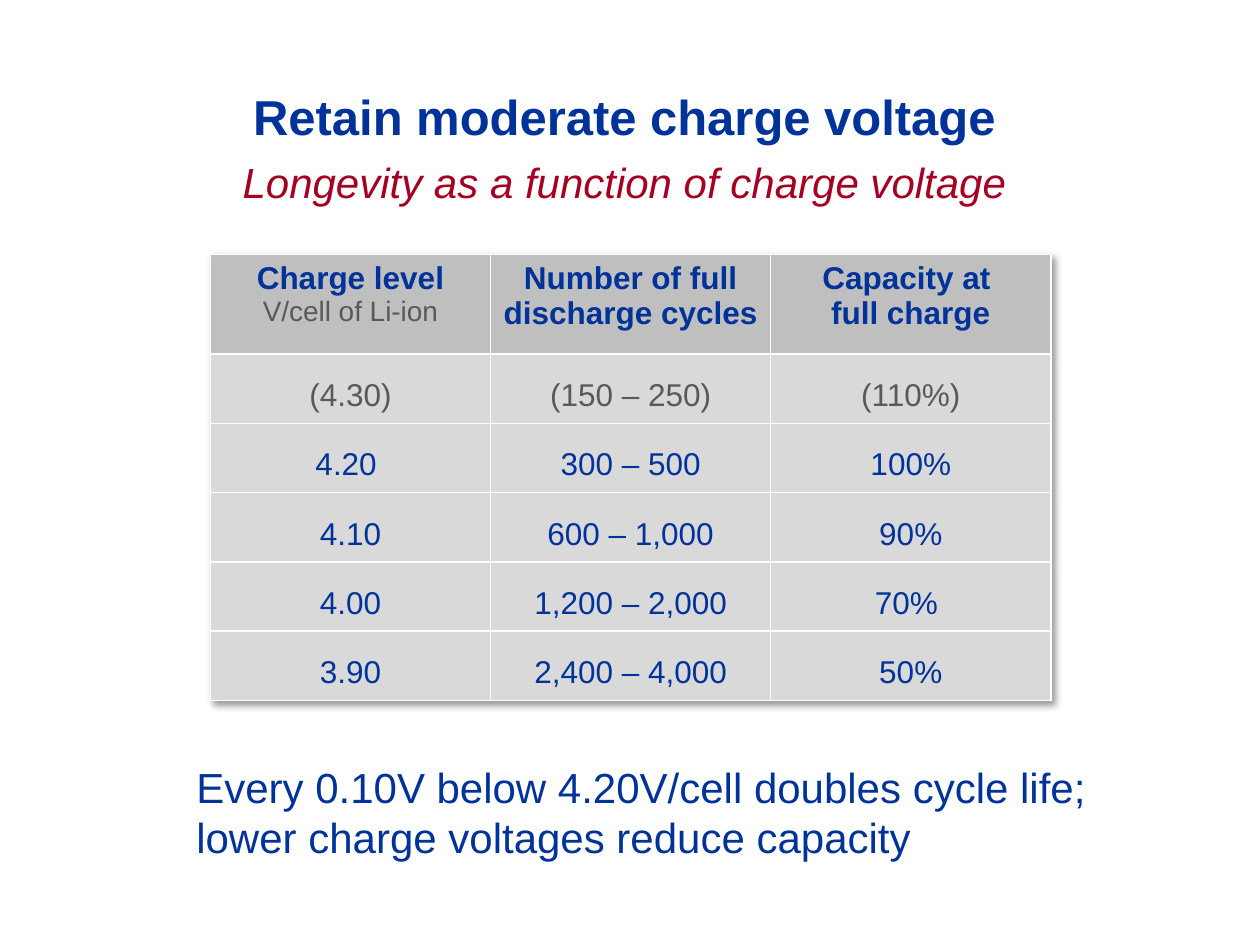
from lxml import etree
from pptx import Presentation, oxml, util as u
from pptx.dml.color import RGBColor
from pptx.enum import text

NAVY = RGBColor(0x00, 0x33, 0x99)
CRIMSON = RGBColor(0xA5, 0x00, 0x21)
GRAY = RGBColor(0x59, 0x59, 0x59)
HEADER_FILL = RGBColor(0xBF, 0xBF, 0xBF)
BODY_FILL = RGBColor(0xD9, 0xD9, 0xD9)

HEADERS = [
    ["Charge level", "V/cell of Li-ion"],
    ["Number of full discharge cycles"],
    ["Capacity at ", "full charge"],
]
ROWS = [
    ("(4.30)", "(150 – 250)", "(110%)"),
    ("4.20 ", "300 – 500", "100%"),
    ("4.10", "600 – 1,000", "90%"),
    ("4.00", "1,200 – 2,000", "70% "),
    ("3.90", "2,400 – 4,000", "50%"),
]
TABLE_SHADOW = (
    '<a:effectLst xmlns:a="http://schemas.openxmlformats.org/drawingml/2006/main">'
    '<a:outerShdw blurRad="50800" dist="38100" dir="2700000" algn="tl" rotWithShape="0">'
    '<a:srgbClr val="000000"><a:alpha val="40000"/></a:srgbClr>'
    '</a:outerShdw></a:effectLst>'
)


def add_text(para, words, size=18, color=NAVY, bold=False, italic=False):
    span = para.add_run()
    span.text = words
    font = span.font
    font.name, font.size, font.bold, font.italic = "Arial", u.Pt(size), bold, italic
    font.color.rgb = color


class SlideBuilder:
    def __init__(self, page):
        self.page = page

    def prepare(self, box, left, top, width, height):
        """Place a text shape and return its frame, set from the top down."""
        box.left, box.top = u.Inches(left), u.Inches(top)
        box.width, box.height = u.Inches(width), u.Inches(height)
        frame = box.text_frame
        frame.word_wrap = True
        frame.auto_size = text.MSO_AUTO_SIZE.NONE
        frame.vertical_anchor = text.MSO_ANCHOR.TOP
        frame.margin_top = u.Inches(0.09)
        return frame

    def title(self, heading, subtitle, *place):
        frame = self.prepare(self.page.shapes.title, *place)
        first, second = frame.paragraphs[0], frame.add_paragraph()
        for para in (first, second):
            para.alignment = text.PP_ALIGN.CENTER
            para.space_after = u.Pt(3)
        second.space_before = u.Pt(3)
        add_text(first, heading, size=28, bold=True)
        add_text(second, subtitle, size=24, color=CRIMSON, italic=True)

    def note(self, words, *place):
        box = self.page.shapes.add_textbox(0, 0, 0, 0)
        add_text(self.prepare(box, *place).paragraphs[0], words, size=24)

    def cell(self, cell, fill):
        cell.fill.solid()
        cell.fill.fore_color.rgb = fill
        para = cell.text_frame.paragraphs[0]
        para.alignment = text.PP_ALIGN.CENTER
        return para

    def table(self, left, top, width, header_height, row_height):
        height = header_height + row_height * len(ROWS)
        table = self.page.shapes.add_table(
            len(ROWS) + 1, len(HEADERS), u.Inches(left), u.Inches(top),
            u.Inches(width), u.Inches(height)).table
        table.horz_banding = False
        table._tbl.tblPr.insert(0, oxml.parse_xml(TABLE_SHADOW))

        # Header row
        table.rows[0].height = u.Inches(header_height)
        for column, lines in enumerate(HEADERS):
            para = self.cell(table.cell(0, column), HEADER_FILL)
            add_text(para, lines[0], bold=True)
            for line in lines[1:]:
                para.add_line_break()
                if column == 0:
                    add_text(para, line, size=16, color=GRAY)
                else:
                    add_text(para, line, bold=True)

        # Values, with the over-voltage row in gray
        for row, values in enumerate(ROWS, start=1):
            table.rows[row].height = u.Inches(row_height)
            for column, value in enumerate(values):
                para = self.cell(table.cell(row, column), BODY_FILL)
                para.line_spacing = 1.5
                add_text(para, value, color=GRAY if row == 1 else NAVY)


def main():
    deck = Presentation()
    deck.slide_width, deck.slide_height = u.Inches(10), u.Inches(7.5)
    builder = SlideBuilder(deck.slides.add_slide(deck.slide_layouts[5]))
    builder.title("Retain moderate charge voltage",
                  "Longevity as a function of charge voltage",
                  0.98, 0.6, 7.95, 1.06)
    builder.table(1.67, 2.02, 6.67, header_height=0.79, row_height=0.55)
    builder.note("Every 0.10V below 4.20V/cell doubles cycle life; "
                 "lower charge voltages reduce capacity",
                 1.46, 5.95, 7.32, 0.91)
    deck.save("out.pptx")


if __name__ == "__main__":
    main()
